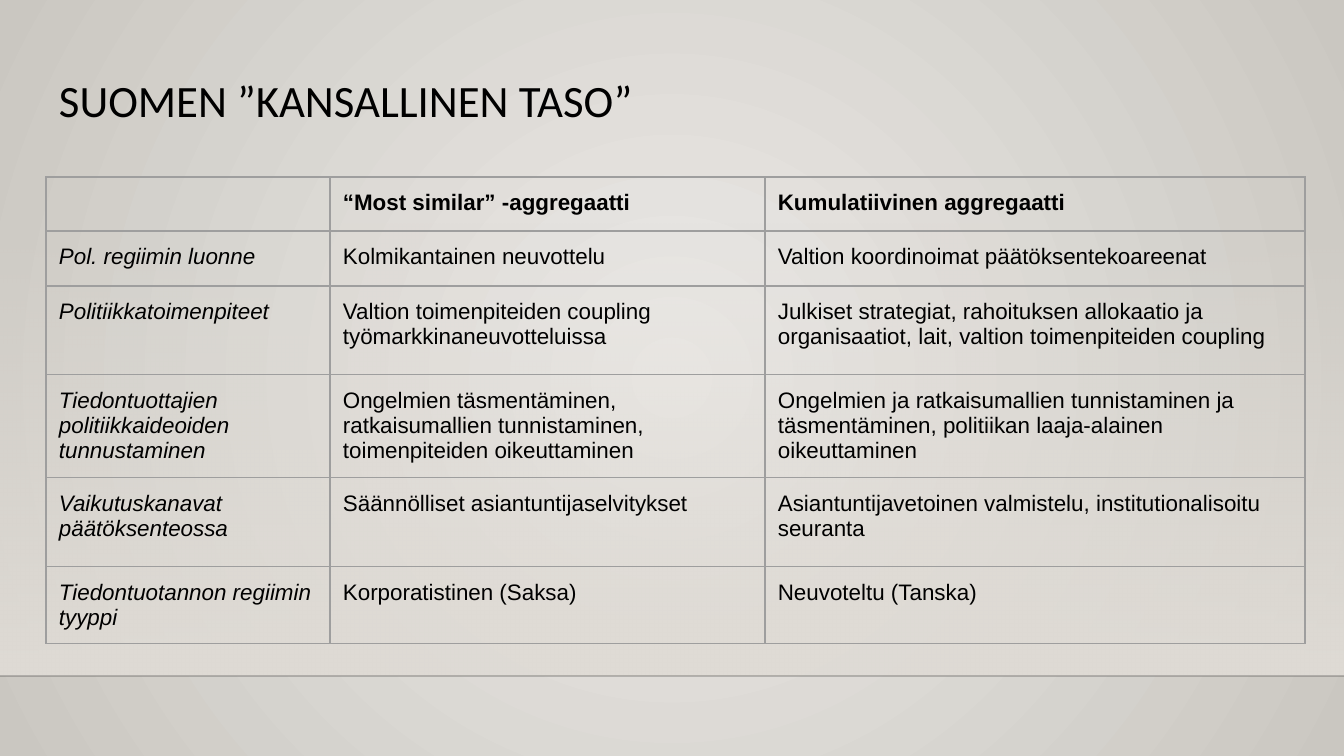
from lxml import etree
from pptx import Presentation, util as u
from pptx.dml.color import RGBColor
from pptx.enum import shapes, text
from pptx.oxml import ns

PX = 914400 / 134.4
BLACK = RGBColor(0x00, 0x00, 0x00)
RULE = RGBColor(0x00, 0x00, 0x01)
BORDER = RGBColor(0x9E, 0x9E, 0x9E)
BAND = RGBColor(0xDF, 0xDB, 0xD5)
CENTRE = RGBColor(0xEC, 0xEA, 0xE7)
EDGE = RGBColor(0xCA, 0xC7, 0xC1)

COLUMNS = [284, 435, 540]
HEIGHTS = [54, 55, 89, 103, 89, 77]
ROWS = [
    ["", "“Most similar” -aggregaatti", "Kumulatiivinen aggregaatti"],
    ["Pol. regiimin luonne", "Kolmikantainen neuvottelu",
     "Valtion koordinoimat päätöksentekoareenat"],
    ["Politiikkatoimenpiteet",
     "Valtion toimenpiteiden coupling työmarkkinaneuvotteluissa",
     "Julkiset strategiat, rahoituksen allokaatio ja organisaatiot, lait, "
     "valtion toimenpiteiden coupling"],
    ["Tiedontuottajien politiikkaideoiden tunnustaminen",
     "Ongelmien täsmentäminen, ratkaisumallien tunnistaminen, "
     "toimenpiteiden oikeuttaminen",
     "Ongelmien ja ratkaisumallien tunnistaminen ja täsmentäminen, "
     "politiikan laaja-alainen oikeuttaminen"],
    ["Vaikutuskanavat päätöksenteossa", "Säännölliset asiantuntijaselvitykset",
     "Asiantuntijavetoinen valmistelu, institutionalisoitu seuranta"],
    ["Tiedontuotannon regiimin tyyppi", "Korporatistinen (Saksa)",
     "Neuvoteltu (Tanska)"],
]


def px(value):
    return u.Emu(round(value * PX))


def add(parent, tag, **attributes):
    return etree.SubElement(parent, ns.qn(tag), attributes)


class Slide:
    inset = px(13)

    def __init__(self, deck):
        self.page = deck.slides.add_slide(deck.slide_layouts[5])

    def gradient(self, fill, start, end):
        fill.gradient()
        for stop, color, position in zip(fill.gradient_stops, (start, end), (0, 1)):
            stop.color.rgb = color
            stop.position = position

    def set_alpha(self, element, percent):
        add(element.find(".//" + ns.qn("a:srgbClr")), "a:alpha", val=str(percent * 1000))

    def background(self):
        self.gradient(self.page.background.fill, CENTRE, EDGE)
        grad = self.page.element.find(".//" + ns.qn("a:gradFill"))
        grad.remove(grad.find(ns.qn("a:lin")))
        circle = add(grad, "a:path", path="circle")
        add(circle, "a:fillToRect", l="50000", t="50000", r="50000", b="50000")

    def fading_band(self, left, top, width, height):
        band = self.page.shapes.add_shape(
            shapes.MSO_SHAPE.RECTANGLE, px(left), px(top), px(width), px(height))
        band.shadow.inherit = False
        band.line.fill.background()
        self.gradient(band.fill, BAND, BAND)
        band.fill.gradient_angle = 270
        self.set_alpha(band.element.spPr, 0)

    def rule(self, left, right, y):
        line = self.page.shapes.add_connector(
            shapes.MSO_CONNECTOR.STRAIGHT, px(left), px(y), px(right), px(y))
        line.line.color.rgb = RULE
        line.line.width = u.Pt(1)
        self.set_alpha(line.element.spPr, 20)
        add(line.element.spPr, "a:effectLst")

    def style(self, para, font, size, bold=False, italic=False):
        para.alignment = text.PP_ALIGN.LEFT
        for span in para.runs:
            span.font.name = font
            span.font.size = u.Pt(size)
            span.font.bold = bold
            span.font.italic = italic
            span.font.color.rgb = BLACK

    def title(self, words, left, top, width, height):
        box = self.page.shapes.title
        box.left, box.top, box.width, box.height = map(px, (left, top, width, height))
        frame = box.text_frame
        frame.text = words
        frame.word_wrap = True
        frame.auto_size = text.MSO_AUTO_SIZE.NONE
        frame.vertical_anchor = text.MSO_ANCHOR.TOP
        frame.margin_left = frame.margin_right = self.inset
        frame.margin_top = frame.margin_bottom = self.inset
        frame.paragraphs[0].line_spacing = 0.9
        self.style(frame.paragraphs[0], "Calibri", 24)

    def borders(self, cell):
        properties = cell._tc.get_or_add_tcPr()
        for index, side in enumerate("LRTB"):
            line = add(properties, "a:ln" + side, w=str(u.Pt(0.75)))
            add(add(line, "a:solidFill"), "a:srgbClr", val=str(BORDER))
            properties.insert(index, line)

    def table(self, left, top, rows, widths, heights):
        grid = self.page.shapes.add_table(
            len(rows), len(widths), px(left), px(top),
            px(sum(widths)), px(sum(heights))).table
        grid.first_row = grid.horz_banding = False
        for column, width in zip(grid.columns, widths):
            column.width = px(width)
        for row, height in zip(grid.rows, heights):
            row.height = px(height)
        for r, words in enumerate(rows):
            for c, word in enumerate(words):
                cell = grid.cell(r, c)
                cell.fill.background()
                self.borders(cell)
                cell.margin_left = cell.margin_right = self.inset
                cell.margin_top = cell.margin_bottom = self.inset
                para = cell.text_frame.paragraphs[0]
                para.text = word
                self.style(para, "Arial", 12, bold=r == 0, italic=c == 0)
                if not word:  # keeps the empty cell from stretching its row
                    add(para._p, "a:endParaRPr", sz="1200")


def main():
    deck = Presentation()
    deck.slide_width, deck.slide_height = px(1344), px(756)
    slide = Slide(deck)

    # Backdrop
    slide.background()
    slide.fading_band(0, 223, 1344, 453)
    slide.rule(0, 1344, 676)

    # Content
    slide.title("SUOMEN ”KANSALLINEN TASO”", 46, 66, 1252, 85)
    slide.table(46, 177, ROWS, COLUMNS, HEIGHTS)

    deck.save("out.pptx")


if __name__ == "__main__":
    main()
